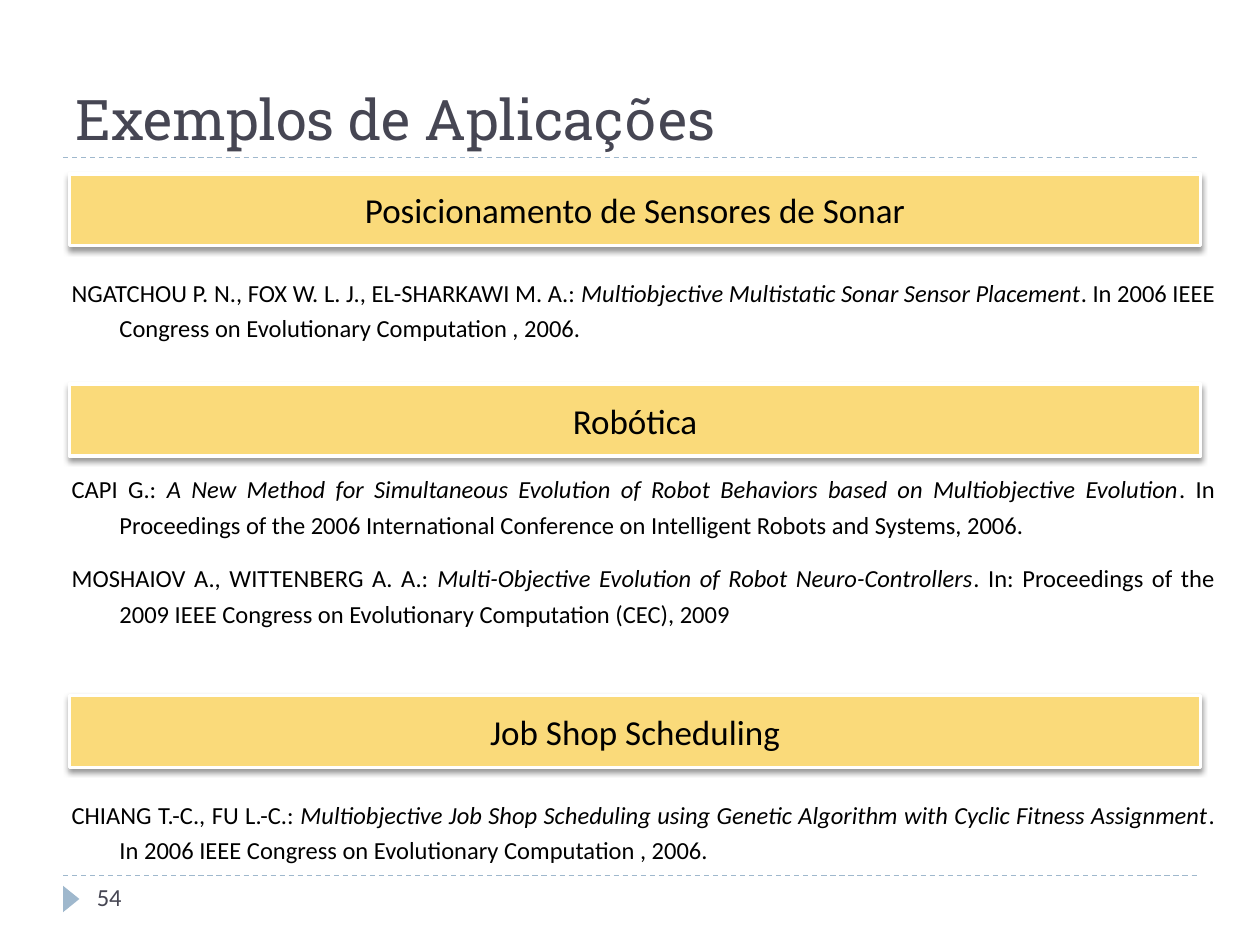
from lxml import etree
from pptx import Presentation
from pptx.dml.color import RGBColor
from pptx.enum import dml, shapes, text
from pptx.oxml.ns import qn
from pptx.util import Inches, Pt

# Content
TITLE = "Exemplos de Aplicações"
PAGE_NUMBER = "54"
# Each section: heading, banner top, references top, references height,
# references as (authors, work, publication)
SECTIONS = [
    ("Posicionamento de Sensores de Sonar", 1.38, 2.11, 0.7, [
        ("NGATCHOU P. N., FOX W. L. J., EL-SHARKAWI M. A.: ",
         "Multiobjective Multistatic Sonar Sensor Placement",
         ". In 2006 IEEE Congress on Evolutionary Computation , 2006."),
    ]),
    ("Robótica", 3.05, 3.67, 1.72, [
        ("CAPI G.: ",
         "A New Method for Simultaneous Evolution of Robot Behaviors "
         "based on Multiobjective Evolution",
         ". In Proceedings of the 2006 International Conference on "
         "Intelligent Robots and Systems, 2006."),
        ("MOSHAIOV A., WITTENBERG A. A.: ",
         "Multi-Objective Evolution of Robot Neuro-Controllers",
         ". In: Proceedings of the 2009 IEEE Congress on Evolutionary "
         "Computation (CEC), 2009"),
    ]),
    ("Job Shop Scheduling", 5.52, 6.25, 0.7, [
        ("CHIANG T.-C., FU L.-C.: ",
         "Multiobjective Job Shop Scheduling using Genetic Algorithm "
         "with Cyclic Fitness Assignment",
         ". In 2006 IEEE Congress on Evolutionary Computation , 2006."),
    ]),
]
RULES = [1.25, 6.95]

THEME = {
    "heading_font": "Roboto Slab", "body_font": "Calibri",
    "title_size": 32, "banner_size": 20, "body_size": 14,
    "ink": "000000", "muted": "464653", "accent": "9FB8CD",
    "banner": "FADA7A", "border": "FFFFFF",
}
ALIGN = text.PP_ALIGN
ANCHOR = text.MSO_ANCHOR


def color(name):
    return RGBColor.from_string(THEME[name])


def write(frame, paragraphs, font="body_font", size="body_size", ink="ink",
          align=ALIGN.LEFT, anchor=ANCHOR.TOP, hanging=0, spacing=None, gap=0):
    """Fill a frame; each paragraph is a list of (words, italic) runs."""
    frame.word_wrap = True
    frame.vertical_anchor = anchor
    for index, runs in enumerate(paragraphs):
        para = frame.paragraphs[0] if index == 0 else frame.add_paragraph()
        para.alignment = align
        if spacing:
            para.line_spacing = spacing
        if index:
            para.space_before = Pt(gap)
        if hanging:
            props = para._p.get_or_add_pPr()
            props.set("marL", str(Inches(hanging)))
            props.set("indent", str(-Inches(hanging)))
        for words, italic in runs:
            run = para.add_run()
            run.text = words
            run.font.name = THEME[font]
            run.font.size = Pt(THEME[size])
            run.font.italic = italic
            run.font.color.rgb = color(ink)


def add_text(left, top, width, height, paragraphs, **style):
    box = slide.shapes.add_textbox(*map(Inches, (left, top, width, height)))
    write(box.text_frame, paragraphs, **style)


def add_rule(y):
    rule = slide.shapes.add_connector(
        shapes.MSO_CONNECTOR.STRAIGHT, Inches(0.5), Inches(y), Inches(9.5), Inches(y))
    rule.line.color.rgb = color("accent")
    rule.line.width = Pt(0.75)
    rule.line.dash_style = dml.MSO_LINE.DASH
    etree.SubElement(rule._element.spPr, qn("a:effectLst"))


def add_banner(heading, top):
    banner = slide.shapes.add_shape(
        shapes.MSO_SHAPE.RECTANGLE, *map(Inches, (0.55, top, 8.98, 0.57)))
    banner.fill.solid()
    banner.fill.fore_color.rgb = color("banner")
    banner.line.color.rgb = color("border")
    banner.line.width = Pt(2)
    banner.shadow.inherit = False
    # Soft shadow straight below the banner
    effects = banner._element.spPr.find(qn("a:effectLst"))
    shadow = etree.SubElement(
        effects, qn("a:outerShdw"), blurRad=str(Pt(3)), dist=str(Pt(2)),
        dir="5400000", rotWithShape="0")
    tint = etree.SubElement(shadow, qn("a:srgbClr"), val=THEME["ink"])
    etree.SubElement(tint, qn("a:alpha"), val="40000")
    write(banner.text_frame, [[(heading, False)]], size="banner_size",
          align=ALIGN.CENTER, anchor=ANCHOR.MIDDLE)


prs = Presentation()
prs.slide_width, prs.slide_height = Inches(10), Inches(7.5)
slide = prs.slides.add_slide(prs.slide_layouts[6])

# Frame of the slide: rules, page marker, title
for y in RULES:
    add_rule(y)
marker = slide.shapes.add_shape(
    shapes.MSO_SHAPE.ISOSCELES_TRIANGLE, *map(Inches, (0.46, 7.07, 0.21, 0.13)))
marker.rotation = 90
marker.fill.solid()
marker.fill.fore_color.rgb = color("accent")
marker.line.fill.background()
marker.shadow.inherit = False
add_text(0.5, 0.17, 9, 1.08, [[(TITLE, False)]], font="heading_font",
         size="title_size", ink="muted", anchor=ANCHOR.BOTTOM)

# Sections: banner with its references below
for heading, banner_top, refs_top, refs_height, references in SECTIONS:
    add_banner(heading, banner_top)
    paragraphs = [[(authors, False), (work, True), (publication, False)]
                  for authors, work, publication in references]
    add_text(0.47, refs_top, 9.27, refs_height, paragraphs,
             align=ALIGN.JUSTIFY, hanging=0.38, spacing=1.2, gap=10.5)

# Page number
add_text(0.67, 6.95, 2.17, 0.4, [[(PAGE_NUMBER, False)]], ink="muted")

prs.save("out.pptx")
